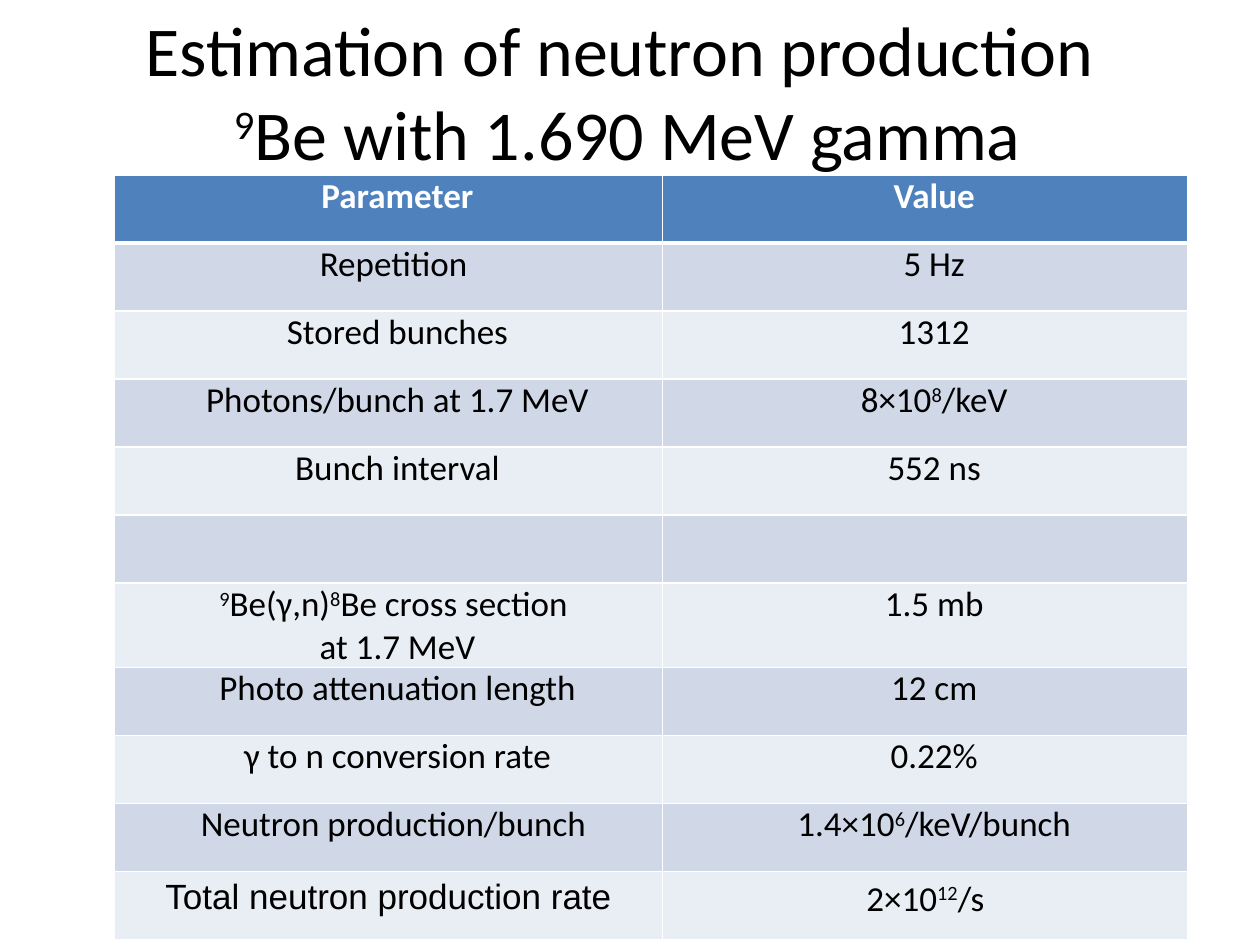
import pptx
import pptx.dml.color
import pptx.enum.text
import pptx.oxml
import pptx.oxml.ns
import pptx.util
from pptx.util import Inches

COLORS = {
    "text": "000000",
    "header text": "FFFFFF",
    "header": "4F81BD",
    "odd row": "D0D8E8",
    "even row": "E9EDF4",
    "border": "FFFFFF",
}

# Text between carets is superscript; a line break starts a new paragraph
ROWS = [
    ("Parameter", "Value"),
    ("Repetition ", "5 Hz"),
    ("Stored bunches", "1312"),
    ("Photons/bunch at 1.7 MeV", "8×10^8^/keV"),
    ("Bunch interval", "552 ns"),
    ("", ""),
    ("^9^Be(γ,n)^8^Be cross section \nat 1.7 MeV", "1.5 mb"),
    ("Photo attenuation length", "12 cm"),
    ("γ to n conversion rate", "0.22%"),
    ("Neutron production/bunch ", "1.4×10^6^/keV/bunch"),
    ("Total neutron production rate", "2×10^12^/s"),
]


def add_runs(paragraph, text, size, color, font="Calibri", bold=False):
    paragraph.alignment = pptx.enum.text.PP_ALIGN.CENTER
    for index, piece in enumerate(text.split("^")):
        if not piece:
            continue
        run = paragraph.add_run()
        run.text = piece
        run.font.name = font
        run.font.size = pptx.util.Pt(size)
        run.font.bold = bold
        run.font.color.rgb = pptx.dml.color.RGBColor.from_string(COLORS[color])
        if index % 2:
            run.font._element.set("baseline", "30000")


def add_border(cell, side, points):
    cell._tc.get_or_add_tcPr().append(pptx.oxml.parse_xml(
        f'<a:ln{side} {pptx.oxml.ns.nsdecls("a")} w="{pptx.util.Pt(points)}">'
        f'<a:solidFill><a:srgbClr val="{COLORS["border"]}"/></a:solidFill></a:ln{side}>'
    ))


presentation = pptx.Presentation()
presentation.slide_width = Inches(10)
presentation.slide_height = Inches(7.5)
slide = presentation.slides.add_slide(presentation.slide_layouts[6])

# Title
title = slide.shapes.add_textbox(Inches(0.48), Inches(0.29), Inches(9), Inches(0.85))
title.text_frame.word_wrap = True
title.text_frame.vertical_anchor = pptx.enum.text.MSO_ANCHOR.MIDDLE
title_paragraph = title.text_frame.paragraphs[0]
add_runs(title_paragraph, "Estimation of neutron production ", 40, "text")
title_paragraph.add_line_break()
add_runs(title_paragraph, "^9^Be with 1.690 MeV gamma", 40, "text")

# Parameter table
row_height = Inches(0.54)
table = slide.shapes.add_table(
    len(ROWS), 2, Inches(0.91), Inches(1.39), Inches(8.52), row_height * len(ROWS)
).table
table.columns[0].width = Inches(4.35)
table.columns[1].width = Inches(4.17)
last_row = len(ROWS) - 1

for row_index, row in enumerate(ROWS):
    table.rows[row_index].height = row_height
    is_header = row_index == 0
    if is_header:
        fill = "header"
    else:
        fill = "odd row" if row_index % 2 else "even row"

    for column_index, text in enumerate(row):
        cell = table.cell(row_index, column_index)

        # Borders, with a thick rule under the header
        for side in "LRTB":
            under_header = (row_index, side) in ((0, "B"), (1, "T"))
            add_border(cell, side, 3 if under_header else 1)
        cell.fill.solid()
        cell.fill.fore_color.rgb = pptx.dml.color.RGBColor.from_string(COLORS[fill])

        # The last row keeps the default margins and has no indent
        if row_index < last_row:
            cell.margin_left = cell.margin_right = Inches(0.07)
            cell.margin_top = cell.margin_bottom = 0
        font = "Arial" if (row_index, column_index) == (last_row, 0) else "Calibri"
        for line_index, line in enumerate(text.split("\n")):
            if line_index:
                paragraph = cell.text_frame.add_paragraph()
            else:
                paragraph = cell.text_frame.paragraphs[0]
            add_runs(paragraph, line, 20, "header text" if is_header else "text", font, is_header)
            if row_index < last_row:
                properties = paragraph._p.get_or_add_pPr()
                properties.set("marL", "0")
                properties.set("indent", str(Inches(0.14)))

presentation.save("out.pptx")
